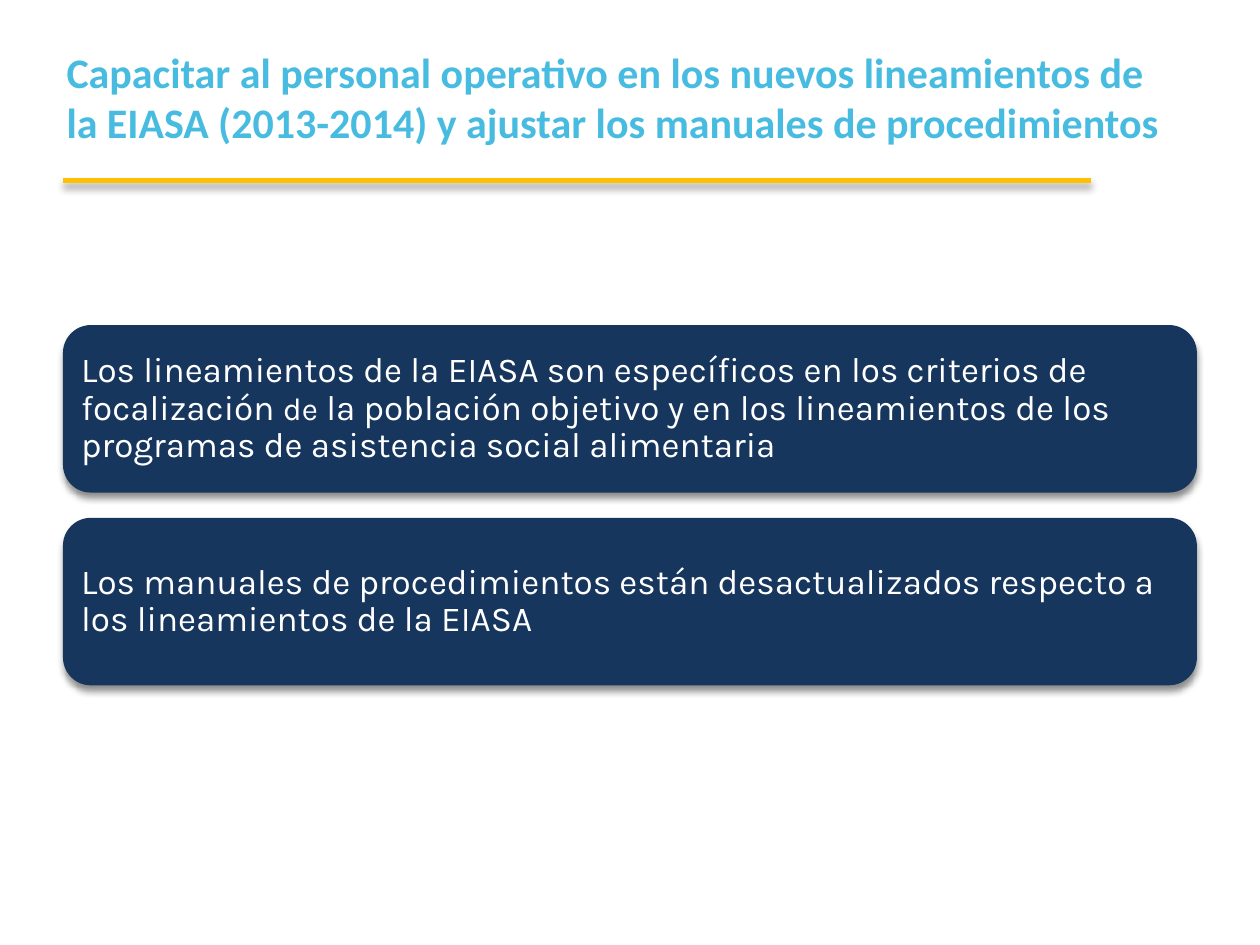
from lxml import etree
from pptx import Presentation
from pptx.dml.color import RGBColor
from pptx.enum.shapes import MSO_CONNECTOR, MSO_SHAPE
from pptx.enum.text import MSO_ANCHOR, PP_ALIGN
from pptx.oxml.ns import qn
from pptx.util import Inches, Pt

COLORS = {"title": "48BCE0", "rule": "FFC000", "card": "17365D",
          "text": "FFFFFF", "shadow": "000000"}


def add_shadow(shape):
    """Soft shadow straight below the shape."""
    properties = shape._element.spPr
    for old in properties.findall(qn("a:effectLst")):
        properties.remove(old)
    effects = etree.SubElement(properties, qn("a:effectLst"))
    shadow = etree.SubElement(effects, qn("a:outerShdw"), blurRad=str(Pt(4)),
                              dist=str(Pt(3)), dir="5400000", rotWithShape="0")
    color = etree.SubElement(shadow, qn("a:srgbClr"), val=COLORS["shadow"])
    etree.SubElement(color, qn("a:alpha"), val="43000")


def add_span(para, text, font, size, color, bold=False):
    span = para.add_run()
    span.text = text
    span.font.name = font
    span.font.size = Pt(size)
    span.font.bold = bold
    span.font.color.rgb = RGBColor.from_string(COLORS[color])


deck = Presentation()
deck.slide_width, deck.slide_height = Inches(10), Inches(7.5)
page = deck.slides.add_slide(deck.slide_layouts[6])

# Cards
cards = [
    [("Los lineamientos de la EIASA son específicos en los criterios de focalización ", 20),
     ("de", 18),
     (" la población objetivo y en los lineamientos de los programas de asistencia "
      "social alimentaria", 20)],
    [("Los manuales de procedimientos están desactualizados respecto a los "
      "lineamientos de la EIASA", 20)],
]
card_top, card_step = 2.58, 1.53
for index, spans in enumerate(cards):
    card = page.shapes.add_shape(
        MSO_SHAPE.ROUNDED_RECTANGLE, Inches(0.5),
        Inches(card_top + index * card_step), Inches(9), Inches(1.33))
    card.fill.solid()
    card.fill.fore_color.rgb = RGBColor.from_string(COLORS["card"])
    card.line.fill.background()
    add_shadow(card)
    frame = card.text_frame
    frame.word_wrap = True
    frame.vertical_anchor = MSO_ANCHOR.MIDDLE
    frame.margin_left = frame.margin_right = Inches(0.08)
    frame.margin_top = frame.margin_bottom = Inches(0.08)
    para = frame.paragraphs[0]
    para.alignment = PP_ALIGN.LEFT
    para.line_spacing = 0.9
    for text, size in spans:
        add_span(para, text, "Karla", size, "text")

# Title
box = page.shapes.add_textbox(Inches(0.43), Inches(0.14), Inches(9), Inches(1.25))
box.text_frame.word_wrap = True
box.text_frame.vertical_anchor = MSO_ANCHOR.MIDDLE
add_span(box.text_frame.paragraphs[0],
         "Capacitar al personal operativo en los nuevos lineamientos de la EIASA "
         "(2013-2014) y ajustar los manuales de procedimientos",
         "Calibri", 24, "title", bold=True)

# Rule under the title
rule = page.shapes.add_connector(MSO_CONNECTOR.STRAIGHT, Inches(0.5), Inches(1.43),
                                 Inches(8.66), Inches(1.43))
rule.line.color.rgb = RGBColor.from_string(COLORS["rule"])
rule.line.width = Pt(3)
add_shadow(rule)

deck.save("out.pptx")
